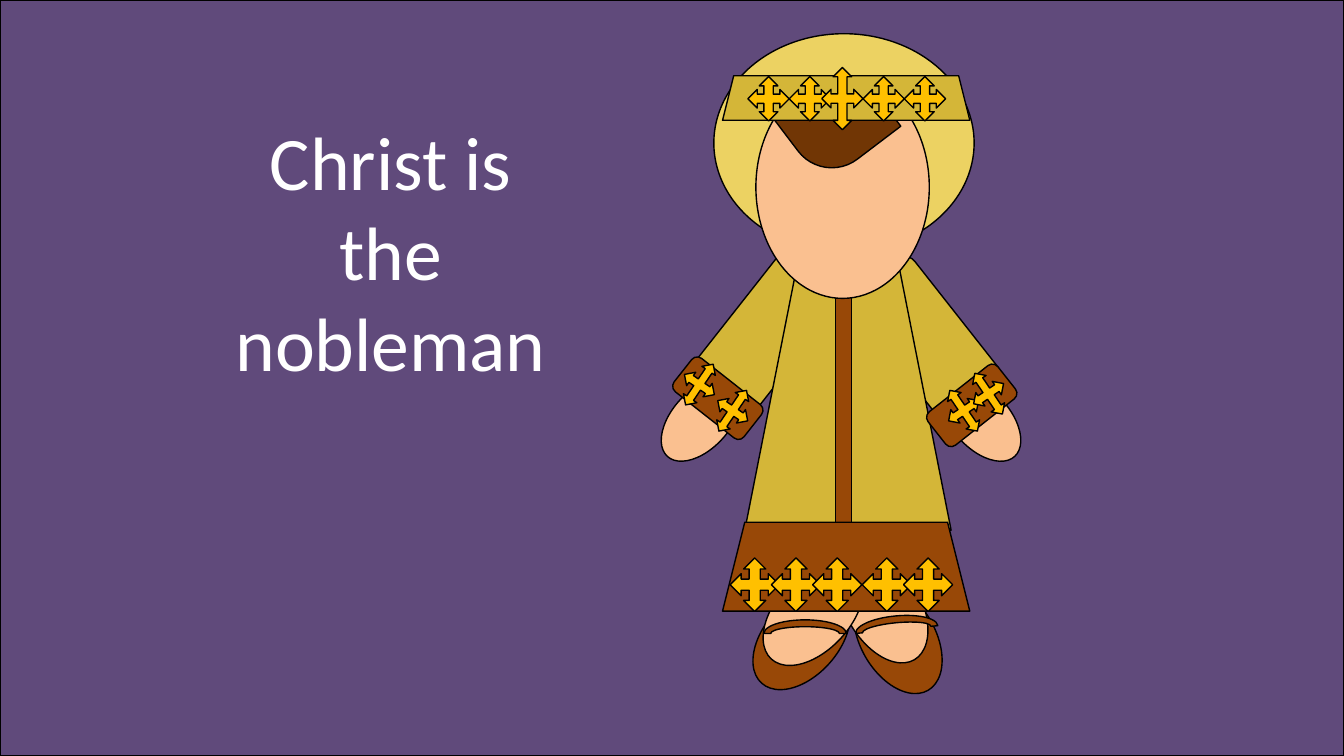
from dataclasses import dataclass, replace

from pptx import Presentation
from pptx.dml.color import RGBColor
from pptx.enum.shapes import MSO_SHAPE
from pptx.enum.text import PP_ALIGN
from pptx.util import Cm, Pt

COLORS = {
    "background": "604A7B",
    "halo": "ECD262",
    "skin": "FAC090",
    "cloth": "D4B638",
    "leather": "984807",
    "hair": "713605",
    "gold": "FFC000",
    "outline": "000000",
    "text": "FFFFFF",
}
SLIDE_WIDTH, SLIDE_HEIGHT = 33.87, 19.05
CROSS_STEP = 1.04

OVAL = MSO_SHAPE.OVAL
RECTANGLE = MSO_SHAPE.RECTANGLE
ROUNDED = MSO_SHAPE.ROUNDED_RECTANGLE
TRAPEZOID = MSO_SHAPE.TRAPEZOID
ARC = MSO_SHAPE.BLOCK_ARC
CROSS = MSO_SHAPE.QUAD_ARROW


@dataclass(frozen=True)
class Part:
    """One filled piece of the drawing; lengths in centimetres."""
    kind: MSO_SHAPE
    color: str
    left: float
    top: float
    width: float
    height: float
    rotation: float = 0
    adjustments: tuple[float, ...] = ()


def cross_row(first: Part, count: int) -> list[Part]:
    return [replace(first, left=first.left + i * CROSS_STEP) for i in range(count)]


def hem_crosses() -> list[Part]:
    cross = Part(CROSS, "gold", 18.4, 14.06, 1.24, 1.35)
    return cross_row(cross, 3) + cross_row(replace(cross, left=21.73), 2)


def cuff_crosses() -> list[Part]:
    places = [(17.17, 9.07, 34.1), (18.01, 9.73, 34.1),
              (23.83, 9.73, -34.1), (24.46, 9.3, -34.1)]
    return [Part(CROSS, "gold", left, top, 0.91, 1.24, rotation)
            for left, top, rotation in places]


def crown_crosses() -> list[Part]:
    cross = Part(CROSS, "gold", 18.85, 1.93, CROSS_STEP, 1.12)
    middle = replace(cross, left=20.71, top=1.7, height=1.57)
    right = replace(cross, left=middle.left + CROSS_STEP)
    return cross_row(cross, 2) + [middle] + cross_row(right, 2)


NOBLEMAN = [
    Part(OVAL, "halo", 17.99, 0.85, 6.56, 5.51),
    # Hands, shoes and feet
    Part(OVAL, "skin", 16.94, 9.32, 1.45, 2.51, 42.4),
    Part(OVAL, "skin", 24, 9.32, 1.45, 2.51, -42.4),
    Part(OVAL, "leather", 19.26, 14.58, 1.88, 3.02, 41.7),
    Part(OVAL, "leather", 21.69, 14.58, 1.88, 3.02, -30.3),
    Part(OVAL, "skin", 21.31, 13.69, 1.88, 3.15, -30.3),
    Part(OVAL, "skin", 19.56, 13.87, 1.88, 3.15, 42.4),
    # Sleeves, tunic, front stripe and cuffs
    Part(ROUNDED, "cloth", 18.31, 6.35, 1.96, 4.19, 38.2),
    Part(ROUNDED, "cloth", 22.35, 6.5, 1.96, 4.04, -38.2),
    Part(TRAPEZOID, "cloth", 18.77, 6.78, 5.2, 6.58),
    Part(RECTANGLE, "leather", 21.06, 7.29, 0.4, 6.07),
    Part(ROUNDED, "leather", 23.37, 9.68, 2.24, 1.07, -38.2),
    Part(ROUNDED, "leather", 16.97, 9.5, 2.24, 1.07, 38.2),
    # Face, hem and shoe straps
    Part(OVAL, "skin", 19.05, 1.91, 4.37, 5.61),
    Part(TRAPEZOID, "leather", 18.21, 13.16, 6.23, 2.24),
    Part(ARC, "leather", 19.25, 15.62, 2.08, 0.69),
    Part(ARC, "leather", 21.56, 15.52, 2.08, 0.69, -5.4),
    *hem_crosses(),
    *cuff_crosses(),
    # Hair and crown
    Part(MSO_SHAPE.ROUND_2_DIAG_RECTANGLE, "hair",
         20.02, 1.85, 2.13, 2.44, 52.8, (0.5, 0)),
    Part(TRAPEZOID, "cloth", 18.21, 1.91, 6.23, 1.12),
    *crown_crosses(),
]


def draw_part(shapes, part: Part) -> None:
    shape = shapes.add_shape(part.kind, Cm(part.left), Cm(part.top),
                             Cm(part.width), Cm(part.height))
    shape.rotation = part.rotation
    for index, value in enumerate(part.adjustments):
        shape.adjustments[index] = value
    shape.shadow.inherit = False
    shape.fill.solid()
    shape.fill.fore_color.rgb = RGBColor.from_string(COLORS[part.color])
    shape.line.color.rgb = RGBColor.from_string(COLORS["outline"])
    shape.line.width = Pt(1)


def add_caption(slide, text: str) -> None:
    text_box = slide.shapes.add_textbox(Cm(5.3), Cm(2.76), Cm(9.09), Cm(7.19))
    text_box.text_frame.word_wrap = True
    paragraph = text_box.text_frame.paragraphs[0]
    paragraph.alignment = PP_ALIGN.CENTER
    run = paragraph.add_run()
    run.text = text
    run.font.name = "Calibri"
    run.font.size = Pt(54)
    run.font.color.rgb = RGBColor.from_string(COLORS["text"])


def main() -> None:
    presentation = Presentation()
    presentation.slide_width = Cm(SLIDE_WIDTH)
    presentation.slide_height = Cm(SLIDE_HEIGHT)
    slide = presentation.slides.add_slide(presentation.slide_layouts[6])
    slide.background.fill.solid()
    slide.background.fill.fore_color.rgb = RGBColor.from_string(COLORS["background"])

    draw_part(slide.shapes,
              Part(RECTANGLE, "background", 0, 0, SLIDE_WIDTH, SLIDE_HEIGHT))
    nobleman = slide.shapes.add_group_shape()
    for part in NOBLEMAN:
        draw_part(nobleman.shapes, part)
    add_caption(slide, "Christ is the nobleman")

    presentation.save("out.pptx")


if __name__ == "__main__":
    main()
